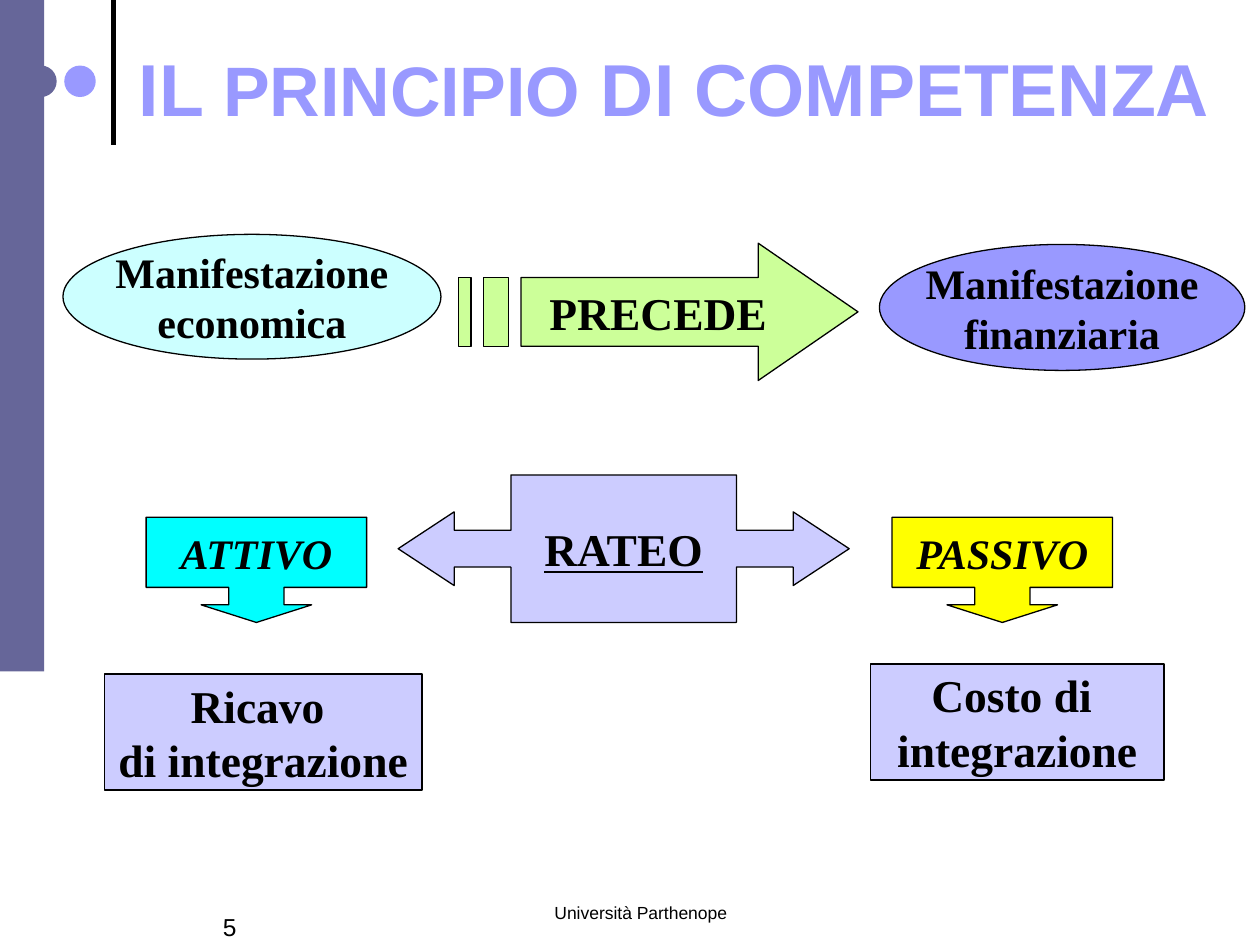
import pptx
import pptx.util
import pptx.dml.color
import pptx.enum.shapes
import pptx.enum.text
import lxml.etree

RGBColor = pptx.dml.color.RGBColor
SHAPE = pptx.enum.shapes.MSO_SHAPE
ALIGN = pptx.enum.text.PP_ALIGN
ANCHOR = pptx.enum.text.MSO_ANCHOR

BLACK = RGBColor(0x00, 0x00, 0x00)
SLATE = RGBColor(0x66, 0x66, 0x99)
PERIWINKLE = RGBColor(0x99, 0x99, 0xFF)
LAVENDER = RGBColor(0xCC, 0xCC, 0xFF)
ICE = RGBColor(0xCC, 0xFF, 0xFF)
LIME = RGBColor(0xCC, 0xFF, 0x99)
CYAN = RGBColor(0x00, 0xFF, 0xFF)
YELLOW = RGBColor(0xFF, 0xFF, 0x00)

SERIF = "Times New Roman"
SANS = "Arial"
WIDTH = pptx.util.Inches(10)
HEIGHT = pptx.util.Inches(7.5)
COL = WIDTH / 100
ROW = HEIGHT / 75


def place(box):
    x, y, w, h = box
    return round(x * COL), round(y * ROW), round(w * COL), round(h * ROW)


def set_font(font, size, name, color=BLACK, bold=False, italic=False, underline=False):
    font.size = pptx.util.Pt(size)
    font.name = name
    font.color.rgb = color
    font.bold = bold
    font.italic = italic
    font.underline = underline


def paint(sp, fill, outlined=True):
    sp.shadow.inherit = False
    sp.fill.solid()
    sp.fill.fore_color.rgb = fill
    if outlined:
        sp.line.color.rgb = BLACK
        sp.line.width = pptx.util.Pt(0.75)
    else:
        sp.line.fill.background()


def label(sp, lines, size, **style):
    tf = sp.text_frame
    tf.word_wrap = False
    tf.vertical_anchor = ANCHOR.MIDDLE
    for i, text in enumerate(lines):
        p = tf.add_paragraph() if i else tf.paragraphs[0]
        p.add_run().text = text
        p.alignment = ALIGN.CENTER
        set_font(p.font, size, SERIF, bold=True, **style)


def add_block(s, kind, box, fill, lines, size, adjustments=(), **style):
    sp = s.shapes.add_shape(kind, *place(box))
    for i, value in enumerate(adjustments):
        sp.adjustments[i] = value
    paint(sp, fill)
    label(sp, lines, size, **style)


def add_text(s, box, text, size, align):
    tf = s.shapes.add_textbox(*place(box)).text_frame
    tf.word_wrap = True
    p = tf.paragraphs[0]
    p.add_run().text = text
    p.alignment = align
    set_font(p.font, size, SANS)


def add_decoration(s, box):
    x, y, w, h = box
    rule = s.shapes.add_connector(
        pptx.enum.shapes.MSO_CONNECTOR.STRAIGHT,
        *place((x + w, y + 11.5, x + w, y)))
    rule.line.color.rgb = BLACK
    rule.line.width = pptx.util.Pt(3)
    lxml.etree.SubElement(rule._element.spPr, pptx.oxml.ns.qn("a:effectLst"))
    for kind, part, color in (
            (SHAPE.OVAL, (x + 2, y + 5.2, 2.5, 2.5), SLATE),
            (SHAPE.OVAL, (x + 5.1, y + 5.2, 2.5, 2.5), PERIWINKLE),
            (SHAPE.RECTANGLE, (x, y, 3.5, h), SLATE)):
        paint(s.shapes.add_shape(kind, *place(part)), color, outlined=False)


def add_title(s, box):
    tf = s.shapes.add_textbox(*place(box)).text_frame
    tf.word_wrap = True
    tf.vertical_anchor = ANCHOR.MIDDLE
    p = tf.paragraphs[0]
    p.alignment = ALIGN.CENTER
    for text, size in (("IL ", 42), ("PRINCIPIO", 40), (" DI COMPETENZA", 42)):
        r = p.add_run()
        r.text = text
        set_font(r.font, size, SANS, PERIWINKLE, bold=True)
    p.add_line_break()
    set_font(p.font, 42, SANS, PERIWINKLE, bold=True)


def add_striped_arrow(s, box, lines):
    x, y, w, h = place(box)
    top, bottom = y + h / 4, y + h * 3 / 4
    neck, step = x + w * 3 / 4, w / 32

    def bar(first, last):
        left, right = x + first * step, x + last * step
        return [(left, top), (left, bottom), (right, bottom), (right, top)]

    body = x + 5 * step
    head = [(neck, y), (neck, top), (body, top), (body, bottom),
            (neck, bottom), (neck, y + h), (x + w, y + h / 2)]
    builder = s.shapes.build_freeform(*head[0])
    builder.add_line_segments(head[1:], close=True)
    for stripe in (bar(2, 4), bar(0, 1)):
        builder.move_to(*stripe[0])
        builder.add_line_segments(stripe[1:], close=True)
    sp = builder.convert_to_shape()
    paint(sp, LIME)
    label(sp, lines, 26)


def add_sequence(s, box):
    x, y, w, h = box
    add_block(s, SHAPE.OVAL, (x, y, 30, 9.9), ICE,
              ["Manifestazione", "economica"], 24)
    add_striped_arrow(s, (x + 31.4, y + 0.7, 31.7, h - 0.7), ["PRECEDE"])
    add_block(s, SHAPE.OVAL, (x + w - 29, y + 0.8, 29, 10), PERIWINKLE,
              ["Manifestazione", "finanziaria"], 24)


def add_rateo(s, box):
    x, y, w, h = box
    add_block(s, SHAPE.LEFT_RIGHT_ARROW_CALLOUT, (x + 20, y, 35.8, h), LAVENDER,
              ["RATEO"], 26, (0.25, 0.25, 0.38, 0.5), underline=True)
    for left, text, color in ((x, "ATTIVO", CYAN), (x + w - 17.5, "PASSIVO", YELLOW)):
        add_block(s, SHAPE.DOWN_ARROW_CALLOUT, (left, y + h - 8.35, 17.5, 8.35), color,
                  [text], 24, (0.525, 0.525, 0.167, 0.667), italic=True)


def add_results(s, box):
    x, y, w, h = box
    add_block(s, SHAPE.RECTANGLE, (x, y + h - 9.2, 25.2, 9.2), LAVENDER,
              ["Ricavo ", "di integrazione"], 26)
    add_block(s, SHAPE.RECTANGLE, (x + w - 23.3, y, 23.3, 9.2), LAVENDER,
              ["Costo di ", "integrazione"], 26)


def add_footer(s, box):
    x, y, w, h = box
    add_text(s, (x + w - 31.7, y, 31.7, 5), "Università Parthenope", 10, ALIGN.CENTER)
    add_text(s, (x, y + 0.8, 14.2, 5), "5", 14, ALIGN.LEFT)


def main():
    prs = pptx.Presentation()
    prs.slide_width, prs.slide_height = WIDTH, HEIGHT
    s = prs.slides.add_slide(prs.slide_layouts[6])
    add_decoration(s, (0, 0, 9, 53.3))
    add_footer(s, (16.7, 71.1, 50, 5.8))
    add_results(s, (8.3, 52.7, 84.1, 10))
    add_rateo(s, (11.6, 37.7, 23.5 + 53.2, 11.7))
    add_sequence(s, (5, 18.6, 93.8, 11.6))
    add_title(s, (9, 2.1, 89, 16.7))
    prs.save("out.pptx")


if __name__ == "__main__":
    main()
